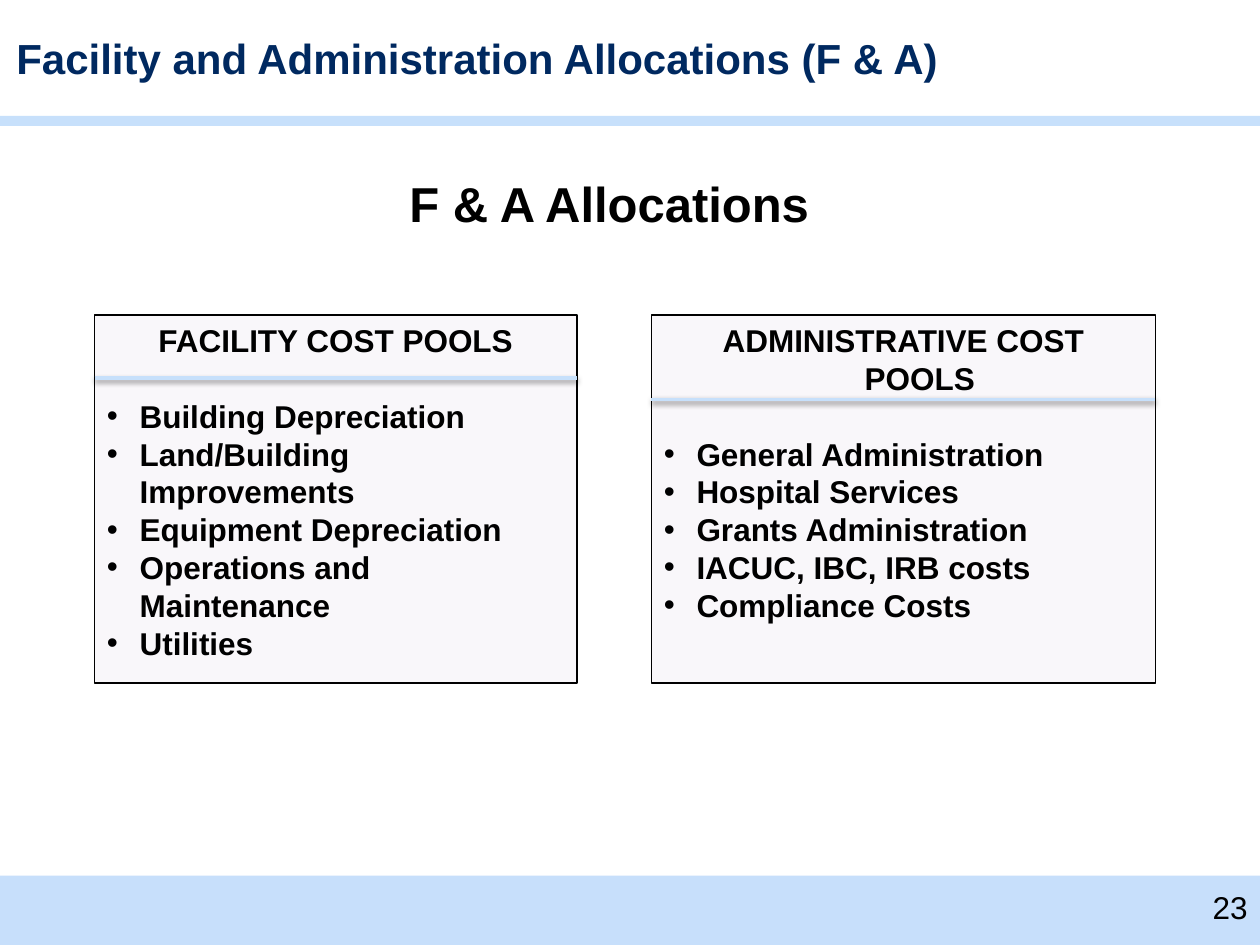
from lxml.etree import SubElement
from pptx import Presentation
from pptx.dml.color import RGBColor
from pptx.enum.shapes import MSO_CONNECTOR as Connector, MSO_SHAPE as Shape
from pptx.enum.text import MSO_ANCHOR as Anchor, PP_ALIGN as Align
from pptx.oxml.ns import qn
from pptx.util import Inches, Pt

NAVY = RGBColor(0x00, 0x29, 0x60)
BLACK = RGBColor(0x00, 0x00, 0x00)
FOOTER_BLUE = RGBColor(0xC7, 0xDF, 0xFB)
RULE_BLUE = RGBColor(0xC7, 0xE0, 0xFB)
LAVENDER = RGBColor(0xF4, 0xF1, 0xF7)

HEADING = {"name": "Arial", "size": Pt(28), "bold": True}
TITLE = {"name": "Arial", "size": Pt(24), "bold": True}
BODY = {"name": "Arial", "size": Pt(18), "bold": True}
NUMBER = {"name": "Arial", "size": Pt(18), "bold": False}

POOL_TOP, POOL_HEIGHT = 2.5, 2.92
LINE_PITCH = Pt(21.6)
POOLS = [
    (0.75, 3.83, 3.0, "FACILITY COST POOLS",
     ["Building Depreciation", "Land/Building Improvements", "Equipment Depreciation",
      "Operations and Maintenance", "Utilities"]),
    (5.17, 4.0, 3.17, "ADMINISTRATIVE COST POOLS",
     ["General Administration", "Hospital Services", "Grants Administration",
      "IACUC, IBC, IRB costs", "Compliance Costs"]),
]


def style_font(paragraph, style, color=BLACK):
    for name, value in style.items():
        setattr(paragraph.font, name, value)
    paragraph.font.color.rgb = color


def add_box(slide, left, top, width, height, color):
    shape = slide.shapes.add_shape(
        Shape.RECTANGLE, Inches(left), Inches(top), Inches(width), Inches(height))
    shape.shadow.inherit = False
    shape.fill.solid()
    shape.fill.fore_color.rgb = color
    shape.line.fill.background()
    return shape


def add_text(slide, left, top, width, height, text, style, align, color=BLACK):
    box = slide.shapes.add_textbox(
        Inches(left), Inches(top), Inches(width), Inches(height))
    frame = box.text_frame
    frame.word_wrap = True
    paragraph = frame.paragraphs[0]
    paragraph.text = text
    paragraph.alignment = align
    style_font(paragraph, style, color)
    return frame


def set_indent(paragraph, bullet):
    properties = paragraph._p.get_or_add_pPr()
    properties.set("marL", str(Inches(0.26)))
    properties.set("indent", str(-Inches(0.26)))
    if bullet:
        SubElement(properties, qn("a:buFont"), typeface="Arial")
        SubElement(properties, qn("a:buChar"), char="•")


def add_pool(slide, left, width, heading, items):
    shape = add_box(slide, left, POOL_TOP, width, POOL_HEIGHT, LAVENDER)
    fill_color = shape.fill._xPr.find(qn("a:solidFill"))[0]
    SubElement(fill_color, qn("a:alpha"), val="50000")
    shape.line.color.rgb = BLACK
    shape.line.width = Pt(0.75)
    frame = shape.text_frame
    frame.word_wrap = True
    frame.vertical_anchor = Anchor.TOP
    for index, text in enumerate([heading, *items]):
        paragraph = frame.paragraphs[0] if index == 0 else frame.add_paragraph()
        paragraph.text = text
        set_indent(paragraph, bullet=index > 0)
        paragraph.alignment = Align.LEFT if index else Align.CENTER
        paragraph.line_spacing = LINE_PITCH
        if index == 1:
            paragraph.space_before = LINE_PITCH
        style_font(paragraph, BODY)


def add_rule(slide, left, width, y):
    rule = slide.shapes.add_connector(
        Connector.STRAIGHT, Inches(left), Inches(y), Inches(left + width), Inches(y))
    rule.line.color.rgb = RULE_BLUE
    rule.line.width = Pt(2)
    effects = SubElement(rule._element.spPr, qn("a:effectLst"))
    shadow = SubElement(effects, qn("a:outerShdw"), blurRad=str(Pt(3.1)),
                        dist=str(Pt(1.6)), dir="5400000", rotWithShape="0")
    color = SubElement(shadow, qn("a:srgbClr"), val=str(BLACK))
    SubElement(color, qn("a:alpha"), val="38000")


def add_title(slide):
    frame = add_text(slide, 0.13, 0.26, 8.55, 0.4,
                     "Facility and Administration Allocations (F & A)",
                     TITLE, Align.LEFT, NAVY)
    frame.vertical_anchor = Anchor.MIDDLE
    for side in ("left", "top", "right", "bottom"):
        setattr(frame, f"margin_{side}", 0)


def main():
    presentation = Presentation()
    presentation.slide_width = Inches(10)
    presentation.slide_height = Inches(7.5)
    slide = presentation.slides.add_slide(presentation.slide_layouts[6])

    add_box(slide, 0, 6.95, 10, 0.55, FOOTER_BLUE)
    add_box(slide, 0, 0.92, 10, 0.08, RULE_BLUE)
    add_title(slide)
    for left, width, rule_y, heading, items in POOLS:
        add_pool(slide, left, width, heading, items)
        add_rule(slide, left, width, rule_y)
    add_text(slide, 2.67, 1.33, 4.33, 0.57, "F & A Allocations", HEADING, Align.CENTER)
    add_text(slide, 0, 7, 10, 0.4, "23", NUMBER, Align.RIGHT)
    presentation.save("out.pptx")


if __name__ == "__main__":
    main()
